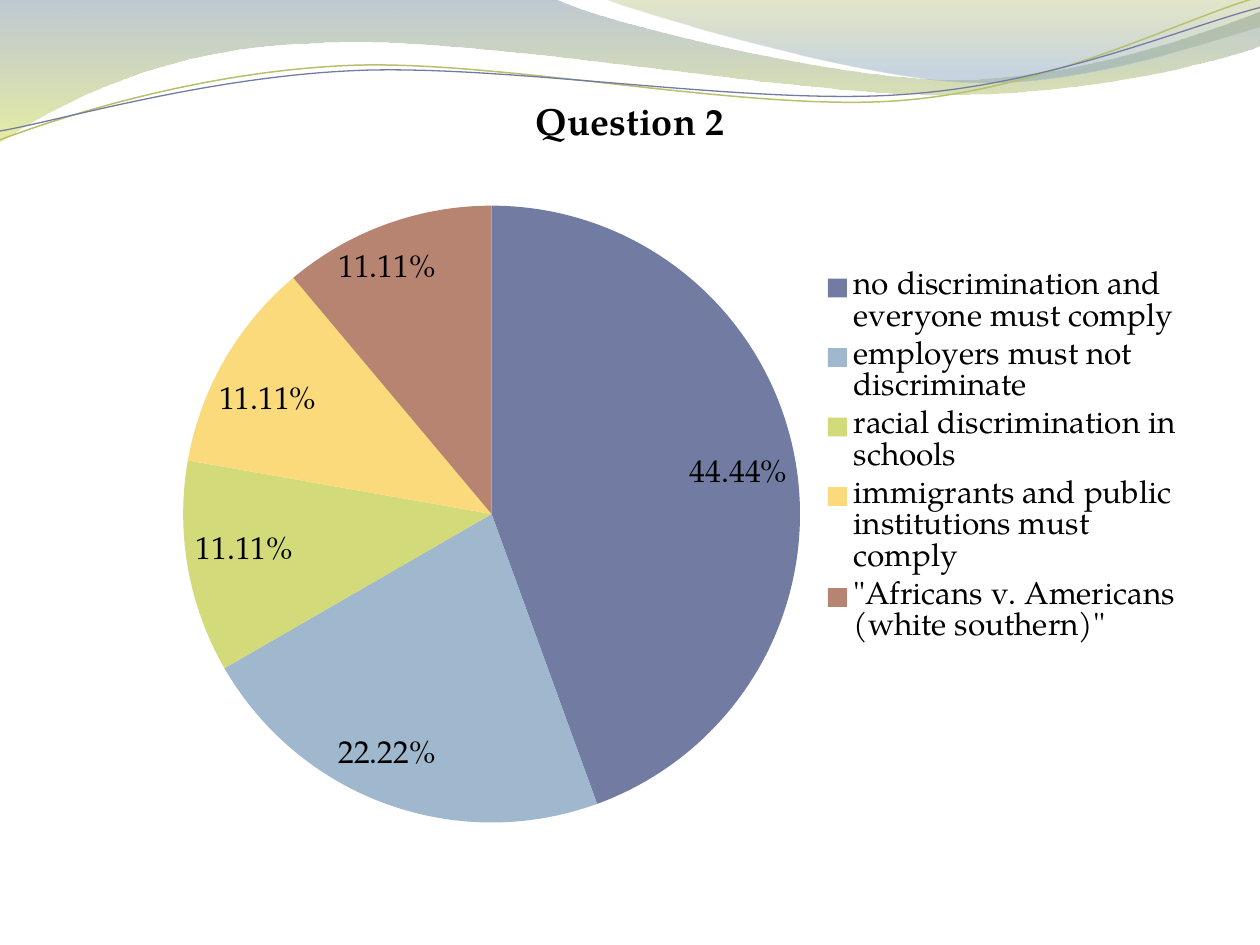
import pptx
import pptx.util
import pptx.chart.data
import pptx.dml.color
import pptx.enum.chart
import pptx.oxml
import pptx.oxml.ns
import lxml.etree

INK = {"text": "000000", "slate": "72889B", "lime": "D3DE57", "olive": "A4AC50",
       "sky": "84A3BD", "moss": "B9C06C", "blue": "727CA3"}
FONT = "TeX Gyre Pagella"
prs = pptx.Presentation()
prs.slide_width, prs.slide_height = pptx.util.Inches(10), pptx.util.Inches(7.5)
wide, high = prs.slide_width, prs.slide_height
slide = prs.slides.add_slide(prs.slide_layouts[6])


def hue(code):
    return pptx.dml.color.RGBColor.from_string(code)


def place(part, **spots):
    """Make the fixed place of a chart part, in percent of the chart's size."""
    old = part.find("{*}layout")
    if old is not None:
        part.remove(old)
    tags = '<c:xMode val="edge"/><c:yMode val="edge"/>'
    if part.tag.endswith("plotArea"):
        tags = '<c:layoutTarget val="inner"/>' + tags
    tags += "".join(f'<c:{k} val="{v / 100}"/>' for k, v in spots.items())
    return pptx.oxml.parse_xml(
        '<c:layout xmlns:c="http://schemas.openxmlformats.org/drawingml/2006/chart">'
        f"<c:manualLayout>{tags}</c:manualLayout></c:layout>")


# Waves: start point, then lines (2 numbers) and curves (6 numbers), in inches
waves = [
    ([(0, 0), (4.4, -0.01), (4.76, 0.17, 6.64, 0.63, 7.58, 0.63),
      (8.53, 0.63, 9.58, 0.26, 10, 0.09), (10.01, 0.36),
      (9.83, 0.44, 8.7, 0.76, 7.46, 0.75), (6.22, 0.75, 3.82, 0.28, 2.57, 0.34),
      (1.29, 0.36, 0.46, 0.83, -0.01, 1.13)],
     [(0, "slate", 45), (1, "lime", 55)], None),
    ([(4.79, -0.01), (5.09, 0.11, 6.82, 0.62, 7.69, 0.65),
      (8.56, 0.69, 9.61, 0.32, 10, 0.21), (10, 0)],
     [(0, "olive", 30), (0.8, "sky", 45)], None),
    ([(0, 1.11), (0.48, 0.93, 1.58, 0.57, 2.77, 0.52),
      (3.95, 0.47, 5.93, 0.89, 7.13, 0.8), (8.33, 0.71, 9.38, 0.15, 9.98, -0.02)],
     None, ("moss", 0.85)),
    ([(0, 1.04), (0.47, 0.96, 1.64, 0.61, 2.83, 0.56),
      (4.03, 0.51, 5.97, 0.84, 7.17, 0.75), (8.36, 0.67, 9.41, 0.21, 10, 0.06)],
     None, ("blue", 0.75)),
]
for route, stops, line in waves:
    dots = [(round(seg[n] * 100), round(seg[n + 1] * 100))
            for seg in route for n in range(0, len(seg), 2)]
    pen = slide.shapes.build_freeform(*dots[0], scale=pptx.util.Inches(0.01))
    pen.add_line_segments(dots[1:], close=bool(stops))
    wave = pen.convert_to_shape()
    wave.shadow.inherit = False
    # Join each three points of a curve into one Bezier
    legs = iter(wave.element.spPr.findall(".//{*}lnTo"))
    for seg in route[1:]:
        leg = next(legs)
        if len(seg) == 6:
            leg.tag = pptx.oxml.ns.qn("a:cubicBezTo")
            for more in (next(legs), next(legs)):
                leg.append(more[0])
                more.getparent().remove(more)
    if stops:
        wave.line.fill.background()
        wave.fill.gradient()
        wave.fill.gradient_angle = 270
        for stop, (pos, name, part) in zip(wave.fill.gradient_stops, stops):
            stop.position = pos
            stop.color.rgb = hue(INK[name])
        # Opacity of each stop
        tints = wave.element.spPr.findall(".//{*}gs/{*}srgbClr")
        for tint, (pos, name, part) in zip(tints, stops):
            lxml.etree.SubElement(tint, pptx.oxml.ns.qn("a:alpha"), val=str(part * 1000))
    else:
        wave.fill.background()
        wave.line.color.rgb = hue(INK[line[0]])
        wave.line.width = pptx.util.Pt(line[1])

# Pie chart
parts = [
    ("no discrimination and everyone must comply", 0.4444, "727CA3"),
    ("employers must not discriminate", 0.2222, "9FB8CD"),
    ("racial discrimination in schools", 0.1111, "D2DA7A"),
    ("immigrants and public institutions must comply", 0.1111, "FADA7A"),
    ('"Africans v. Americans (white southern)"', 0.1111, "B88472"),
]
data = pptx.chart.data.CategoryChartData(number_format="0.00%")
data.categories = [name for name, val, code in parts]
data.add_series("Question 2", [val for name, val, code in parts])
chart = slide.shapes.add_chart(
    pptx.enum.chart.XL_CHART_TYPE.PIE, int(wide * 0.05), pptx.util.Inches(0.58),
    int(wide * 0.9), pptx.util.Inches(6.12), data).chart
chart.font.name = FONT
chart.font.size = pptx.util.Pt(18)
chart.font.color.rgb = hue(INK["text"])

# Slices and labels
plot = chart.plots[0]
plot.vary_by_categories = True
for i, (name, val, code) in enumerate(parts):
    fill = plot.series[0].points[i].format.fill
    fill.solid()
    fill.fore_color.rgb = hue(code)
plot.has_data_labels = True
tags = plot.data_labels
tags.show_value, tags.show_percentage = True, False
tags.number_format, tags.number_format_is_linked = "0.00%", False
tags.position = pptx.enum.chart.XL_LABEL_POSITION.BEST_FIT

# Chart title
chart.has_title = True
run = chart.chart_title.text_frame.paragraphs[0].add_run()
run.text = "Question 2"
run.font.name, run.font.bold = FONT, True
run.font.size = pptx.util.Pt(21.6)
run.font.color.rgb = hue(INK["text"])

# Legend
chart.has_legend = True
chart.legend.position = pptx.enum.chart.XL_LEGEND_POSITION.RIGHT
chart.legend.include_in_layout = False

# Places of title, pie and legend
root = chart.element
title, area, key = [root.find(".//{*}" + k) for k in ("title", "plotArea", "legend")]
title.find("{*}tx").addnext(place(title, x=41.1, y=3))
area.insert(0, place(area, x=10.6, y=17.2, w=54.4, h=80))
key.find("{*}legendPos").addnext(place(key, x=66.8, y=25, w=32, h=50))

prs.save("out.pptx")
